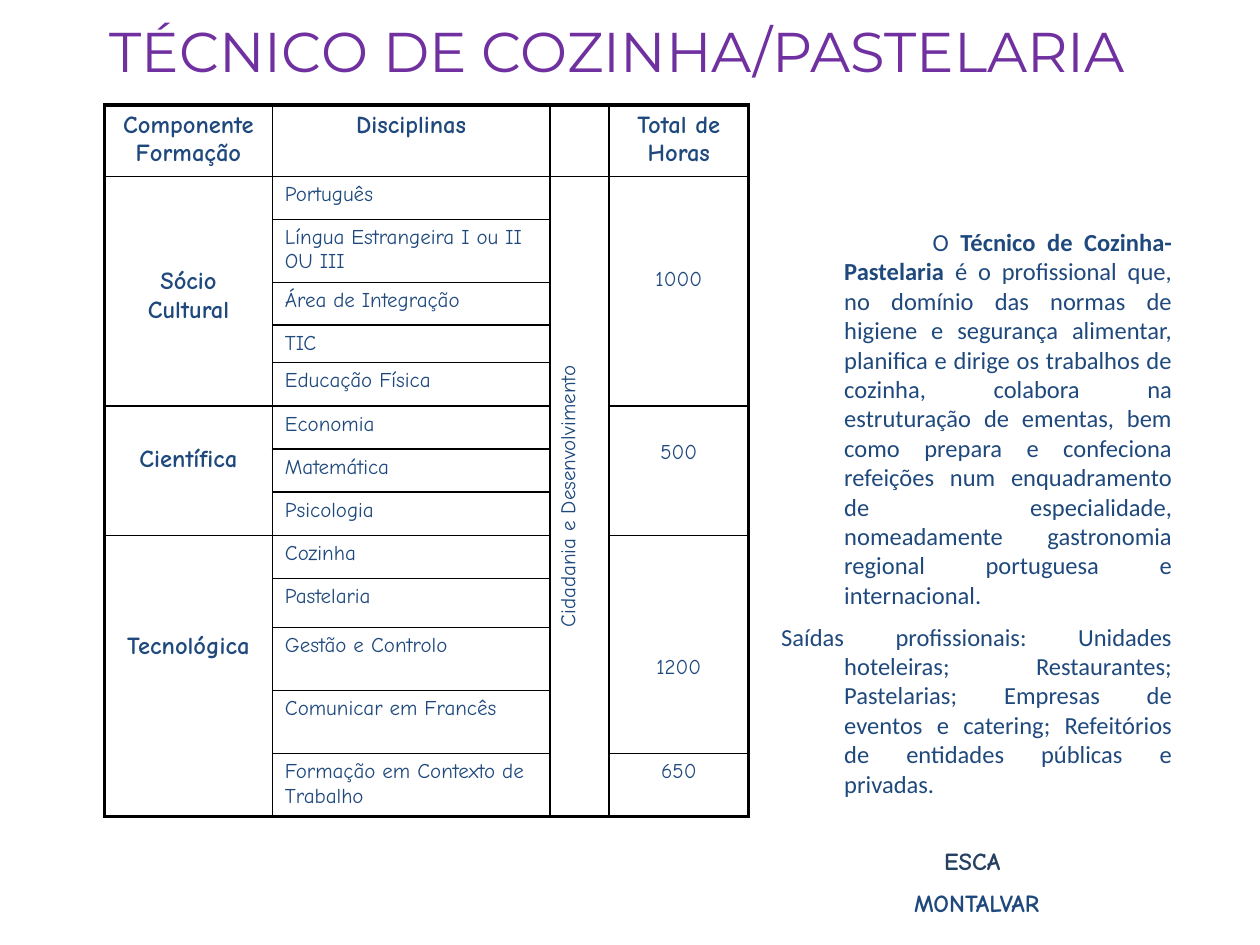
from dataclasses import dataclass

from lxml import etree
from pptx import Presentation
from pptx.dml.color import RGBColor
from pptx.enum.text import MSO_ANCHOR, PP_ALIGN
from pptx.oxml.ns import qn
from pptx.util import Cm, Pt

CENTER, JUSTIFY, LEFT = PP_ALIGN.CENTER, PP_ALIGN.JUSTIFY, PP_ALIGN.LEFT
MIDDLE = MSO_ANCHOR.MIDDLE
TITLE_ONLY = 5


@dataclass(frozen=True)
class Theme:
    """Hold the colours, fonts and sizes of the slide."""
    purple: str = "7030A0"
    blue: str = "1F497D"
    navy: str = "254061"
    border: str = "000000"
    title_font: str = "Montserrat"
    table_font: str = "Comic Neue"
    body_font: str = "Calibri"
    title: int = 32
    large: int = 14
    small: int = 12
    outer: float = 2.25
    inner: float = 1


THEME = Theme()

COLUMNS = [3.38, 5.6, 1.19, 2.81]
ROWS = [1.44, 0.86, 1.27, 0.86, 0.76] + [0.87] * 5 + [0.99] + [1.27] * 3
HEADERS = ["Componente Formação", "Disciplinas", "", "Total de Horas"]
SUBJECTS = [
    "Português", "Língua Estrangeira I ou II OU III", "Área de Integração",
    "TIC", "Educação Física", "Economia", "Matemática", "Psicologia",
    "Cozinha", "Pastelaria", "Gestão e Controlo", "Comunicar em Francês",
    "Formação em Contexto de Trabalho",
]
COMPONENTS = [
    (1, 5, "Sócio Cultural", 1.84),
    (6, 3, "Científica", 0.8),
    (9, 5, "Tecnológica", 1.95),
]
HOURS = [(1, 5, "1000", 1.84), (6, 3, "500", 0.7), (9, 4, "1200", 2.42), (13, 1, "650", 0.13)]
PROFILE = [
    ("O ", False),
    ("Técnico de Cozinha-Pastelaria ", True),
    ("é o profissional que, no domínio das normas de higiene e segurança "
     "alimentar, planifica e dirige os trabalhos de cozinha, colabora na "
     "estruturação de ementas, bem como prepara e confeciona refeições num "
     "enquadramento de especialidade, nomeadamente gastronomia regional "
     "portuguesa e internacional.", False),
]
CAREERS = ("Saídas profissionais: Unidades hoteleiras; Restaurantes; Pastelarias; "
           "Empresas de eventos e catering; Refeitórios de entidades públicas e privadas.")


def add_run(p, text, font=THEME.body_font, size=THEME.large, color=THEME.blue, bold=False):
    """Append a formatted run to a paragraph."""
    r = p.add_run()
    r.text = text
    r.font.name, r.font.size, r.font.bold = font, Pt(size), bold
    r.font.color.rgb = RGBColor.from_string(color)


def add_paragraph(tf, runs, align=JUSTIFY, before=7, left=1.27, first=-1.27, **fmt):
    """Write (text, bold) runs as the next paragraph of a text frame."""
    p = tf.paragraphs[0]
    if p.runs:
        p = tf.add_paragraph()
    p.alignment, p.space_before = align, Pt(before)
    pPr = p._p.get_or_add_pPr()
    pPr.set("marL", str(Cm(left)))
    pPr.set("indent", str(Cm(first)))
    for text, bold in runs:
        add_run(p, text, bold=bold, **fmt)


def fill_cell(cell, text, align=CENTER, size=THEME.small, bold=False, top=0.13):
    """Write one table cell with its text starting at the given top margin."""
    cell.margin_top = Cm(top)
    p = cell.text_frame.paragraphs[0]
    p.alignment = align
    if text:
        add_run(p, text, THEME.table_font, size, bold=bold)


def fill_groups(table, col, groups, **fmt):
    """Merge and label the row groups of one column."""
    for row, span, text, top in groups:
        cell = table.cell(row, col)
        if span > 1:
            cell.merge(table.cell(row + span - 1, col))
        fill_cell(cell, text, top=top, **fmt)


def draw_borders(table):
    """Rule every cell, with heavier lines around the whole table."""
    for i in range(len(ROWS)):
        for j in range(len(COLUMNS)):
            cell = table.cell(i, j)
            cell.fill.background()
            if cell.is_spanned:
                continue
            last = i + (cell.span_height if cell.is_merge_origin else 1)
            edges = {"a:lnL": j == 0, "a:lnR": j == len(COLUMNS) - 1,
                     "a:lnT": i == 0, "a:lnB": last == len(ROWS)}
            tcPr = cell._tc.get_or_add_tcPr()
            for n, (tag, outer) in enumerate(edges.items()):
                ln = etree.Element(qn(tag), w=str(Pt(THEME.outer if outer else THEME.inner)))
                fill = etree.SubElement(ln, qn("a:solidFill"))
                etree.SubElement(fill, qn("a:srgbClr"), val=THEME.border)
                tcPr.insert(n, ln)


def add_title(s, text):
    """Place and format the title placeholder."""
    sp = s.shapes.title
    sp.left, sp.top, sp.width, sp.height = Cm(0.5), Cm(0.26), Cm(23.9), Cm(1.52)
    tf = sp.text_frame
    tf.word_wrap, tf.vertical_anchor = False, MIDDLE
    tf.paragraphs[0].alignment = CENTER
    add_run(tf.paragraphs[0], text, THEME.title_font, THEME.title, THEME.purple)


def add_curriculum(s):
    """Add the table of components, subjects and hours."""
    frame = s.shapes.add_table(len(ROWS), len(COLUMNS), Cm(2.11), Cm(2.12),
                               Cm(sum(COLUMNS)), Cm(sum(ROWS)))
    table = frame.table
    table.first_row = table.horz_banding = False
    for column, width in zip(table.columns, COLUMNS):
        column.width = Cm(width)
    for row, height in zip(table.rows, ROWS):
        row.height = Cm(height)
    for j, text in enumerate(HEADERS):
        fill_cell(table.cell(0, j), text, size=THEME.large, bold=True)
    for i, text in enumerate(SUBJECTS, 1):
        fill_cell(table.cell(i, 1), text, LEFT)
    fill_groups(table, 0, COMPONENTS, size=THEME.large, bold=True)
    fill_groups(table, 2, [(1, len(SUBJECTS), "Cidadania e Desenvolvimento", 0.13)])
    fill_groups(table, 3, HOURS)
    table.cell(1, 2)._tc.get_or_add_tcPr().set("vert", "vert270")
    draw_borders(table)


def add_profile(s):
    """Add the professional profile and the school signature."""
    tf = s.shapes.add_textbox(Cm(15.5), Cm(4.45), Cm(8.38), Cm(14)).text_frame
    tf.word_wrap = True
    add_paragraph(tf, PROFILE, before=0, first=1.78)
    add_paragraph(tf, [(CAREERS, False)])
    signature = {"align": CENTER, "font": THEME.table_font}
    add_paragraph(tf, [("ESCA ", True)], before=27.5, color=THEME.navy, **signature)
    add_paragraph(tf, [("MONTALVAR", True)], **signature)


def main():
    """Build and save the slide."""
    prs = Presentation()
    prs.slide_width, prs.slide_height = Cm(25.4), Cm(19.05)
    s = prs.slides.add_slide(prs.slide_layouts[TITLE_ONLY])
    add_title(s, "TÉCNICO DE COZINHA/PASTELARIA")
    add_curriculum(s)
    add_profile(s)
    prs.save("out.pptx")


if __name__ == "__main__":
    main()
